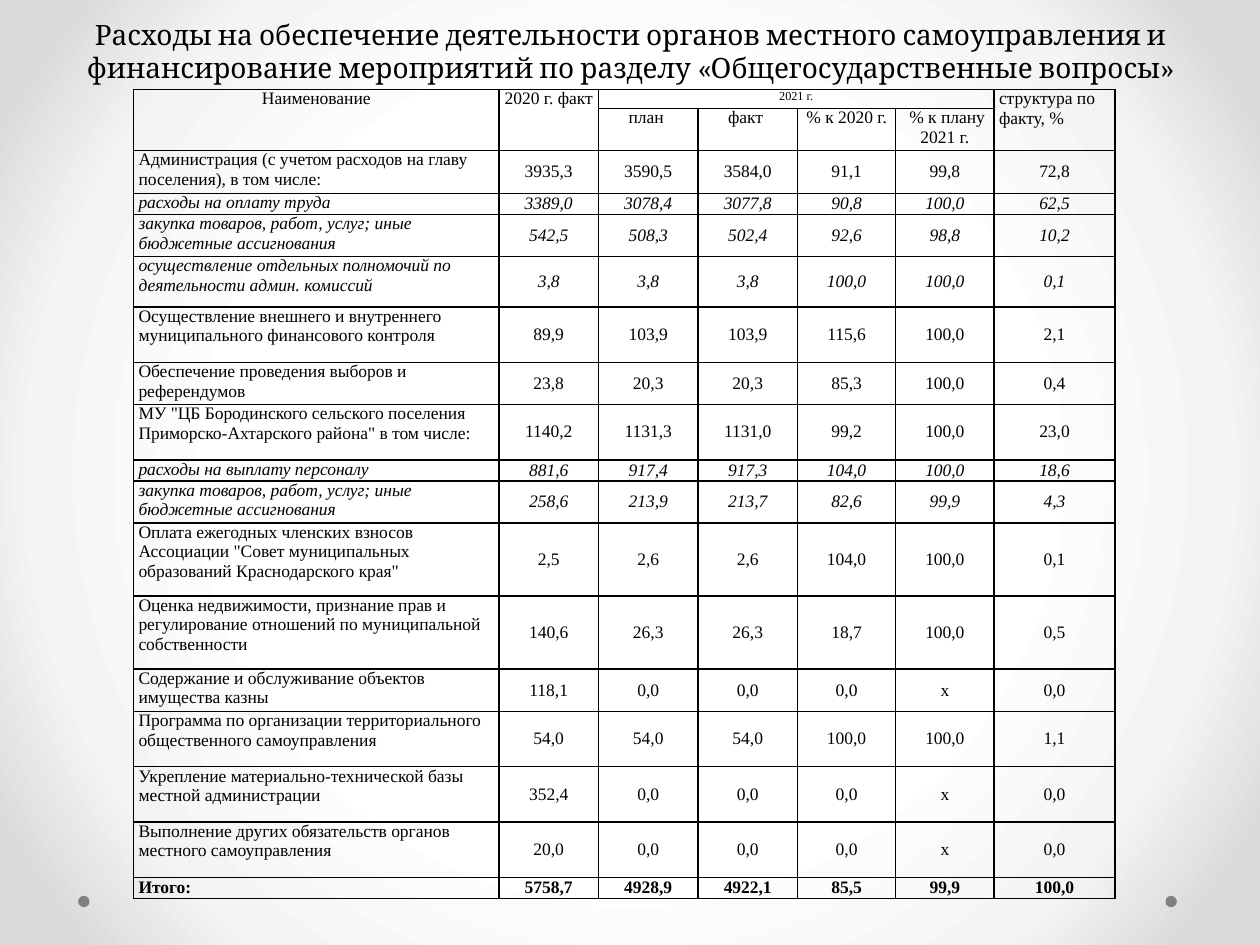
import pptx
import pptx.util
import pptx.oxml
import pptx.oxml.ns
import pptx.dml.color
import pptx.enum.shapes
import pptx.enum.text

Inches = pptx.util.Inches
Pt = pptx.util.Pt
ALIGN = pptx.enum.text.PP_ALIGN
ANCHOR = pptx.enum.text.MSO_ANCHOR
COLORS = {"ink": "000000", "dot": "808080", "glow": "FFFFFF", "mist": "F4F4F4", "edge": "DADADA"}

TITLE = ("Расходы на обеспечение деятельности органов местного самоуправления и "
         "финансирование мероприятий по разделу «Общегосударственные вопросы»")
WIDTHS = [2.9, 0.79, 0.79, 0.79, 0.78, 0.78, 0.96]
HEADS = [
    ["Наименование", "2020 г. факт", "2021 г.", "", "", "", "структура по факту, %"],
    ["", "", "план ", "факт ", "% к 2020 г.", " % к плану 2021 г.", ""],
]
SPANS = [(0, 0, 1, 0), (0, 1, 1, 1), (0, 2, 0, 5), (0, 6, 1, 6)]
ROWS = [
    (0.34, "", "Администрация (с учетом расходов на главу поселения), в том числе:",
     "3935,3 3590,5 3584,0 91,1 99,8 72,8"),
    (0.14, "i", "расходы на оплату труда", "3389,0 3078,4 3077,8 90,8 100,0 62,5"),
    (0.27, "i", "закупка товаров, работ, услуг; иные бюджетные ассигнования",
     "542,5 508,3 502,4 92,6 98,8 10,2"),
    (0.4, "i", "осуществление отдельных полномочий по деятельности админ. комиссий",
     "3,8 3,8 3,8 100,0 100,0 0,1"),
    (0.44, "", "Осуществление внешнего и внутреннего муниципального финансового контроля",
     "89,9 103,9 103,9 115,6 100,0 2,1"),
    (0.29, "", "Обеспечение проведения выборов и референдумов",
     "23,8 20,3 20,3 85,3 100,0 0,4"),
    (0.44, "", 'МУ "ЦБ Бородинского сельского поселения Приморско-Ахтарского района" в том числе:',
     "1140,2 1131,3 1131,0 99,2 100,0 23,0"),
    (0.15, "i", "расходы на выплату персоналу", "881,6 917,4 917,3 104,0 100,0 18,6"),
    (0.27, "i", "закупка товаров, работ, услуг; иные бюджетные ассигнования",
     "258,6 213,9 213,7 82,6 99,9 4,3"),
    (0.58, "", 'Оплата ежегодных членских взносов Ассоциации "Совет муниципальных '
     'образований Краснодарского края"', "2,5 2,6 2,6 104,0 100,0 0,1"),
    (0.58, "", "Оценка недвижимости, признание прав и регулирование отношений "
     "по муниципальной собственности", "140,6 26,3 26,3 18,7 100,0 0,5"),
    (0.29, "", "Содержание и обслуживание объектов имущества казны",
     "118,1 0,0 0,0 0,0 х 0,0"),
    (0.44, "", "Программа по организации территориального общественного самоуправления",
     "54,0 54,0 54,0 100,0 100,0 1,1"),
    (0.44, "", "Укрепление материально-технической базы местной администрации",
     "352,4 0,0 0,0 0,0 х 0,0"),
    (0.44, "", "Выполнение других обязательств органов местного самоуправления",
     "20,0 0,0 0,0 0,0 х 0,0"),
    (0.15, "b", "Итого:", "5758,7 4928,9 4922,1 85,5 99,9 100,0"),
]


class Deck:
    """Holds the style and the current slide, and draws each kind of element."""

    def __init__(self):
        self.show = pptx.Presentation()
        self.show.slide_width, self.show.slide_height = Inches(10), Inches(7.5)
        self.slide = self.show.slides.add_slide(self.show.slide_layouts[6])
        self.shapes = self.slide.shapes

    def backdrop(self, stops):
        marks = "".join(f'<a:gs pos="{pos * 1000}"><a:srgbClr val="{COLORS[key]}"/></a:gs>'
                        for pos, key in stops)
        names = pptx.oxml.ns.nsdecls("p", "a")
        back = pptx.oxml.parse_xml(
            f'<p:bg {names}><p:bgPr><a:gradFill rotWithShape="1"><a:gsLst>{marks}</a:gsLst>'
            '<a:path path="circle"><a:fillToRect l="50000" t="50000" r="50000" b="50000"/>'
            '</a:path></a:gradFill><a:effectLst/></p:bgPr></p:bg>')
        self.slide.element.find(pptx.oxml.ns.qn("p:cSld")).insert(0, back)

    def dot(self, left, top, size):
        oval = self.shapes.add_shape(pptx.enum.shapes.MSO_SHAPE.OVAL, Inches(left),
                                     Inches(top), Inches(size), Inches(size))
        oval.shadow.inherit = False
        oval.fill.solid()
        oval.fill.fore_color.rgb = pptx.dml.color.RGBColor.from_string(COLORS["dot"])
        oval.line.fill.background()

    def label(self, frame, text, face, size, align, style=""):
        frame.text = text
        frame.word_wrap = True
        line = frame.paragraphs[0]
        line.alignment = align
        for run in line.runs:
            font = run.font
            font.name, font.size = face, Pt(size)
            font.bold, font.italic = style == "b", style == "i"
            font.color.rgb = pptx.dml.color.RGBColor.from_string(COLORS["ink"])

    def title(self, text, left, top, width, height):
        frame = self.shapes.add_textbox(Inches(left), Inches(top), Inches(width),
                                        Inches(height)).text_frame
        self.label(frame, text, "Cambria", 16, ALIGN.CENTER)
        frame.vertical_anchor = ANCHOR.BOTTOM

    def border(self, cell):
        props = cell._tc.get_or_add_tcPr()
        names = pptx.oxml.ns.nsdecls("a")
        for spot, side in enumerate("LRTB"):
            props.insert(spot, pptx.oxml.parse_xml(
                f'<a:ln{side} {names} w="12700"><a:solidFill><a:srgbClr val="{COLORS["ink"]}"/>'
                f'</a:solidFill></a:ln{side}>'))

    def cell(self, cell, text, align, anchor, size=10, style=""):
        cell.margin_left = cell.margin_right = Inches(0.04)
        cell.margin_top = cell.margin_bottom = 0
        cell.vertical_anchor = anchor
        cell.fill.background()
        self.border(cell)
        self.label(cell.text_frame, text, "Times New Roman", size, align, style)

    def table(self, left, top):
        highs = [0.15, 0.28] + [row[0] for row in ROWS]
        grid = self.shapes.add_table(len(highs), len(WIDTHS), Inches(left), Inches(top),
                                     Inches(sum(WIDTHS)), Inches(sum(highs))).table
        grid.first_row = grid.horz_banding = False
        for col, width in zip(grid.columns, WIDTHS):
            col.width = Inches(width)
        for row, high in zip(grid.rows, highs):
            row.height = Inches(high)
        for r, heads in enumerate(HEADS):
            for c, text in enumerate(heads):
                self.cell(grid.cell(r, c), text, ALIGN.LEFT if c == 6 else ALIGN.CENTER,
                          ANCHOR.TOP, 7 if text == "2021 г." else 10)
        for r, (_, style, name, nums) in enumerate(ROWS, len(HEADS)):
            self.cell(grid.cell(r, 0), name, ALIGN.LEFT, ANCHOR.TOP, style=style)
            for c, num in enumerate(nums.split(), 1):
                self.cell(grid.cell(r, c), num, ALIGN.CENTER, ANCHOR.MIDDLE, style=style)
        for r, c, low, last in SPANS:
            grid.cell(r, c).merge(grid.cell(low, last))


def main():
    deck = Deck()
    deck.backdrop([(50, "glow"), (76, "mist"), (92, "edge")])
    for left in (9.25, 0.62):
        deck.dot(left, 7.11, 0.09)
    deck.title(TITLE, 0.51, -0.34, 9, 1.06)
    deck.table(1.06, 0.71)
    deck.show.save("out.pptx")


if __name__ == "__main__":
    main()
